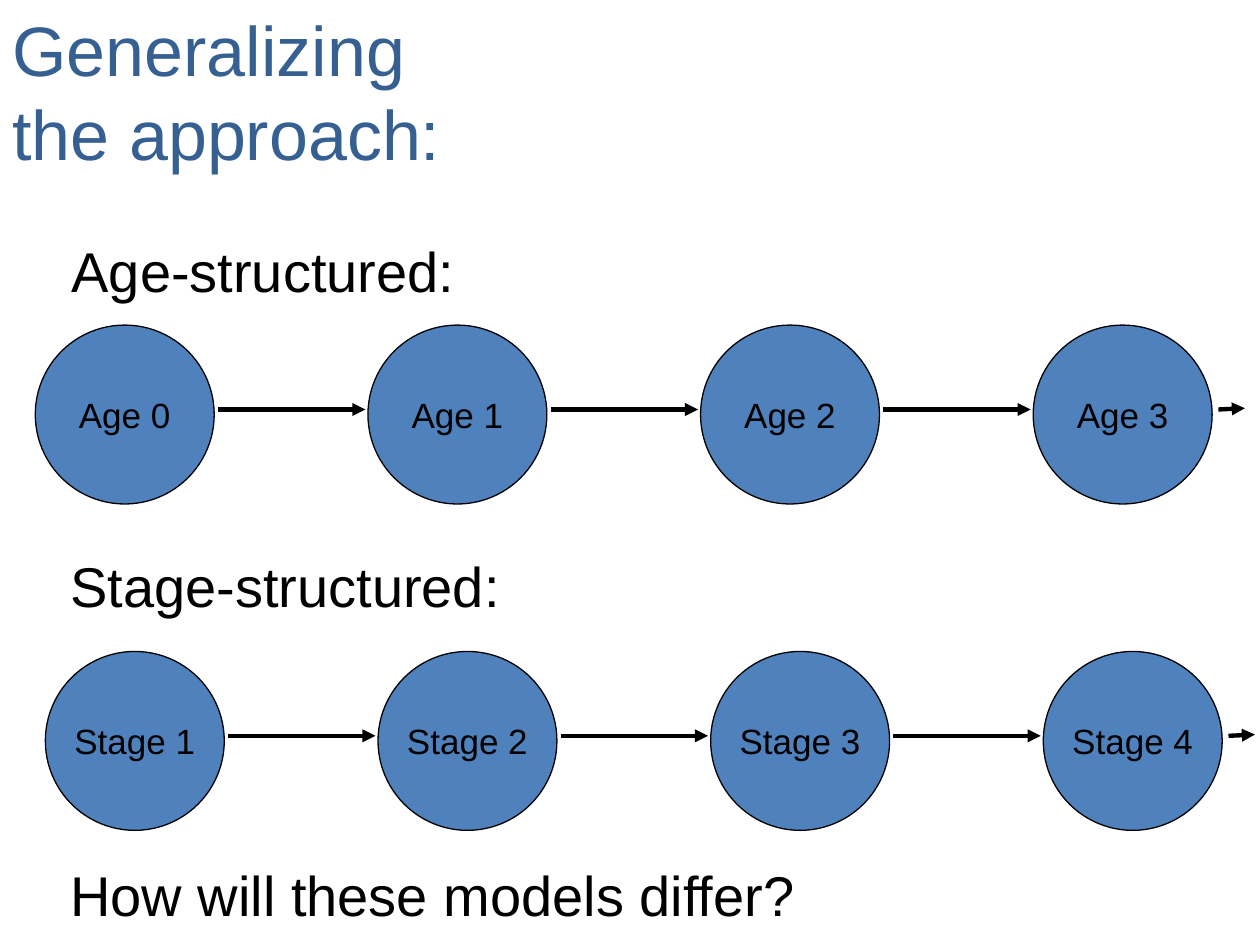
"""Build the slide on age-structured and stage-structured models."""
import lxml.etree
import pptx
import pptx.dml.color
import pptx.enum.shapes
import pptx.enum.text
import pptx.oxml.ns
import pptx.util

Inches, Pt = pptx.util.Inches, pptx.util.Pt
RGBColor = pptx.dml.color.RGBColor
Align, Anchor = pptx.enum.text.PP_ALIGN, pptx.enum.text.MSO_ANCHOR
qn = pptx.oxml.ns.qn

BLACK = RGBColor(0x00, 0x00, 0x00)
BLUE = RGBColor(0x4F, 0x81, 0xBD)
NAVY = RGBColor(0x37, 0x60, 0x92)
FONT = "Arial"

TITLE = ["Generalizing", "the approach:"]
HEADINGS = [
    ("Age-structured:", 0.47, 1.83, 3.33),
    ("Stage-structured:", 0.46, 4.33, 3.65),
    ("How will these models differ?", 0.46, 6.78, 6.08),
]
CHAINS = [
    (["Age 0", "Age 1", "Age 2", "Age 3"], 0.28, 2.58),
    (["Stage 1", "Stage 2", "Stage 3", "Stage 4"], 0.36, 5.17),
]

PITCH = 2.64
DIAMETER = 1.42
ARROW_GAP = 0.03
ARROW_LENGTH = 1.17
ARROW_DROP = 0.67
LAST_GAP = 0.05
LAST_LENGTH = 0.21
LAST_RISE = 0.01


def write(frame, lines, size, color, align):
    frame.text = "\n".join(lines)
    for paragraph in frame.paragraphs:
        paragraph.alignment = align
        paragraph.font.name = FONT
        paragraph.font.size = Pt(size)
        paragraph.font.color.rgb = color


def add_title(slide):
    title = slide.shapes.title
    title.left, title.top = Inches(0), Inches(0)
    title.width, title.height = Inches(3.78), Inches(1.45)
    frame = title.text_frame
    write(frame, TITLE, 40, NAVY, Align.LEFT)
    frame.vertical_anchor = Anchor.TOP
    frame.word_wrap = False
    frame.auto_size = pptx.enum.text.MSO_AUTO_SIZE.NONE


def add_heading(slide, text, left, top, width):
    heading = slide.shapes.add_textbox(
        Inches(left), Inches(top), Inches(width), Inches(0.64))
    heading.text_frame.word_wrap = False
    write(heading.text_frame, [text], 32, BLACK, Align.LEFT)


def add_class(slide, label, left, top):
    circle = slide.shapes.add_shape(
        pptx.enum.shapes.MSO_SHAPE.OVAL,
        Inches(left), Inches(top), Inches(DIAMETER), Inches(DIAMETER))
    circle.shadow.inherit = False
    circle.fill.solid()
    circle.fill.fore_color.rgb = BLUE
    circle.line.color.rgb = BLACK
    circle.line.width = Pt(0.75)
    frame = circle.text_frame
    frame.word_wrap = False
    frame.vertical_anchor = Anchor.MIDDLE
    write(frame, [label], 20, BLACK, Align.CENTER)


def add_arrow(slide, x, y, length, rise):
    arrow = slide.shapes.add_connector(
        pptx.enum.shapes.MSO_CONNECTOR.STRAIGHT,
        Inches(x), Inches(y), Inches(x + length), Inches(y - rise))
    arrow.line.color.rgb = BLACK
    arrow.line.width = Pt(2.5)
    lxml.etree.SubElement(arrow.line._get_or_add_ln(), qn("a:tailEnd"), type="triangle")
    lxml.etree.SubElement(arrow._element.spPr, qn("a:effectLst"))


def add_chain(slide, labels, left, top):
    for column, label in enumerate(labels):
        x = left + column * PITCH
        add_class(slide, label, x, top)
        last = column == len(labels) - 1
        gap, length, rise = (
            (LAST_GAP, LAST_LENGTH, LAST_RISE) if last else (ARROW_GAP, ARROW_LENGTH, 0))
        add_arrow(slide, x + DIAMETER + gap, top + ARROW_DROP, length, rise)


def main():
    deck = pptx.Presentation()
    deck.slide_width, deck.slide_height = Inches(10), Inches(7.5)
    slide = deck.slides.add_slide(deck.slide_layouts[5])
    add_title(slide)
    for heading in HEADINGS:
        add_heading(slide, *heading)
    for chain in CHAINS:
        add_chain(slide, *chain)
    deck.save("out.pptx")


if __name__ == "__main__":
    main()
